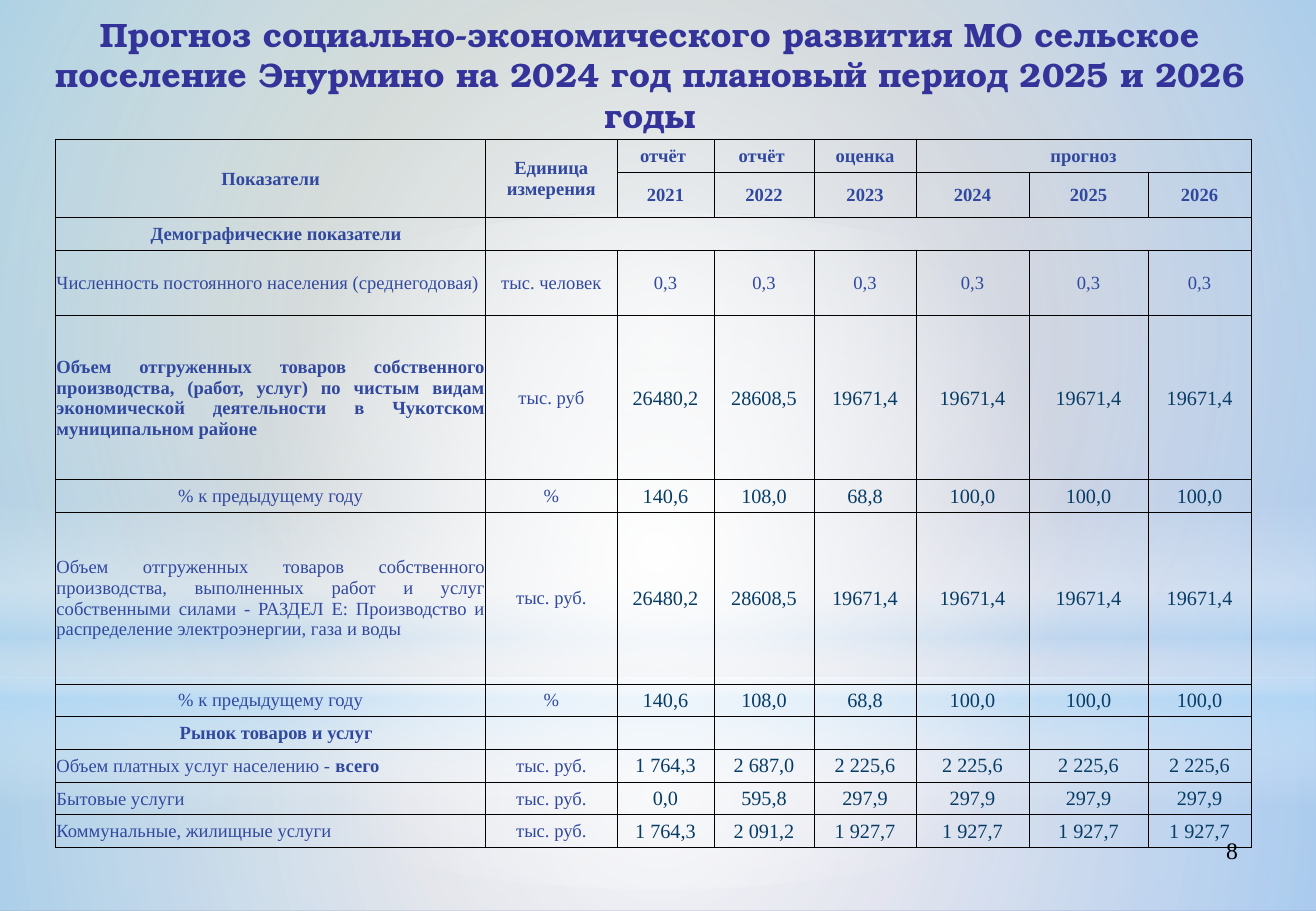
import pptx
import pptx.util
import pptx.dml.color
import pptx.enum.shapes
import pptx.enum.text
import pptx.oxml
import pptx.oxml.ns
from dataclasses import dataclass

Pt = pptx.util.Pt
RGB = pptx.dml.color.RGBColor.from_string
ALIGN = pptx.enum.text.PP_ALIGN
MIDDLE = pptx.enum.text.MSO_ANCHOR.MIDDLE
SHAPE = pptx.enum.shapes.MSO_SHAPE
qn = pptx.oxml.ns.qn
NS = pptx.oxml.ns.nsdecls("a")


@dataclass(frozen=True)
class Theme:
    wide: float = 780.13
    high: float = 540
    serif: str = "Times New Roman"
    head: str = "TeX Gyre Bonum"
    title: str = "333399"
    label: str = "31489F"
    value: str = "073C65"
    black: str = "000000"
    white: str = "FFFFFF"
    sky: str = "B4DCFA"
    dusk: tuple = ("96AB94", "8488C4")
    big: int = 20
    page: int = 14
    mid: int = 12
    small: int = 11
    line: float = 0.5


T = Theme()

TITLE = ("Прогноз социально-экономического развития МО сельское поселение "
         "Энурмино на 2024 год плановый период 2025 и 2026 годы")
COLS = [255, 77.8, 57.5, 59.4, 60.4, 67, 70.6, 61.1]
ROWS = [19.4] * 3 + [38.9, 97.2, 19.4, 101.6] + [19.4] * 5
HORIZON = 401.76
YEARS = ["2021", "2022", "2023", "2024", "2025", "2026"]

GOODS = ("Объем отгруженных товаров собственного производства, (работ, услуг) "
         "по чистым видам экономической деятельности в Чукотском муниципальном районе")
POWER = ("Объем отгруженных товаров собственного производства, выполненных работ "
         "и услуг собственными силами - РАЗДЕЛ E: Производство и распределение "
         "электроэнергии, газа и воды")
OUTPUT = ["26480,2", "28608,5", "19671,4"]
GROWTH = ["140,6", "108,0", "68,8"] + ["100,0"] * 3
SHARE = ([("% к предыдущему году", False)], ALIGN.CENTER, "%", GROWTH)

# Table row: label runs (text, bold), label alignment, unit, values;
# a list of three values carries the last one through the forecast years.
DATA = {
    3: ([("Численность постоянного населения (среднегодовая)", False)],
        ALIGN.LEFT, "тыс. человек", ["0,3"] * 3),
    4: ([(GOODS, True)], ALIGN.JUSTIFY, "тыс. руб", OUTPUT),
    5: SHARE,
    6: ([(POWER, False)], ALIGN.JUSTIFY, "тыс. руб.", OUTPUT),
    7: SHARE,
    9: ([("Объем платных услуг населению - ", False), ("всего", True)],
        ALIGN.LEFT, "тыс. руб.", ["1 764,3", "2 687,0", "2 225,6"]),
    10: ([("Бытовые услуги", False)],
         ALIGN.LEFT, "тыс. руб.", ["0,0", "595,8", "297,9"]),
    11: ([("Коммунальные, жилищные услуги", False)],
         ALIGN.LEFT, "тыс. руб.", ["1 764,3", "2 091,2", "1 927,7"]),
}
PEOPLE = 3
SECTIONS = {2: "Демографические показатели", 8: "Рынок товаров и услуг"}


def add_run(para, text, size, color, bold=False, face=T.serif):
    run = para.add_run()
    run.text = text
    font = run.font
    font.name, font.size, font.bold = face, Pt(size), bold
    font.color.rgb = RGB(color)


def add_text(slide, box, text, align, anchor, **style):
    frame = slide.shapes.add_textbox(*map(Pt, box)).text_frame
    frame.word_wrap = True
    frame.vertical_anchor = anchor
    para = frame.paragraphs[0]
    para.alignment = align
    add_run(para, text, **style)


def add_glow(slide, kind, box, stops, angle=None):
    """Add a borderless shape with (place, colour, opacity) gradient stops."""
    shape = slide.shapes.add_shape(kind, *map(Pt, box))
    shape.shadow.inherit = False
    shape.line.fill.background()
    shape.fill.background()
    marks = "".join(
        f'<a:gs pos="{place * 1000}"><a:srgbClr val="{color}">'
        f'<a:alpha val="{alpha * 1000}"/></a:srgbClr></a:gs>'
        for place, color, alpha in stops)
    if angle is None:
        way = ('<a:path path="circle"><a:fillToRect l="50000" t="50000" '
               'r="50000" b="50000"/></a:path>')
    else:
        way = f'<a:lin ang="{angle * 60000}" scaled="0"/>'
    grad = pptx.oxml.parse_xml(
        f'<a:gradFill {NS} rotWithShape="1"><a:gsLst>{marks}</a:gsLst>{way}</a:gradFill>')
    props = shape._element.spPr
    props.replace(props.find(qn("a:noFill")), grad)


def add_sky(slide):
    fill = slide.background.fill
    fill.gradient()
    fill.gradient_angle = 315
    for stop, color in zip(fill.gradient_stops, T.dusk):
        stop.color.rgb = RGB(color)
    white, sky = T.white, T.sky
    add_glow(slide, SHAPE.RECTANGLE, (0, HORIZON, T.wide, T.high - HORIZON),
             [(0, white, 91), (37, white, 76), (100, sky, 79)])
    add_glow(slide, SHAPE.RECTANGLE, (0, 0, T.wide, HORIZON),
             [(0, white, 89), (48, white, 62), (100, sky, 79)])
    add_glow(slide, SHAPE.RECTANGLE, (0, 296.6, T.wide, 180),
             [(0, white, 0), (29, white, 30), (45, sky, 40),
              (55, white, 26), (65, sky, 60), (100, white, 0)], 90)
    add_glow(slide, SHAPE.OVAL, (0, 126, T.wide, HORIZON),
             [(0, white, 100), (56, white, 0)])


def style_cell(cell):
    cell.vertical_anchor = MIDDLE
    cell.margin_left = cell.margin_right = cell.margin_top = Pt(0.5)
    cell.margin_bottom = 0
    props = cell._tc.get_or_add_tcPr()
    for side in ("lnL", "lnR", "lnT", "lnB"):
        props.append(pptx.oxml.parse_xml(
            f'<a:{side} {NS} w="{Pt(T.line)}"><a:solidFill>'
            f'<a:srgbClr val="{T.black}"/></a:solidFill></a:{side}>'))
    cell.fill.background()
    # Keeps the default type size from stretching rows with empty cells.
    cell.text_frame.paragraphs[0]._p.append(
        pptx.oxml.parse_xml(f'<a:endParaRPr {NS} sz="{T.small * 100}"/>'))


def fill_cell(cell, runs, align=ALIGN.CENTER, size=T.small, color=T.label):
    para = cell.text_frame.paragraphs[0]
    para.alignment = align
    for text, bold in runs:
        add_run(para, text, size, color, bold)


def add_grid(slide):
    frame = slide.shapes.add_table(len(ROWS), len(COLS), Pt(33), Pt(82.6),
                                   Pt(sum(COLS)), Pt(sum(ROWS)))
    grid = frame.table
    grid.first_row = grid.horz_banding = False
    for col, wide in zip(grid.columns, COLS):
        col.width = Pt(wide)
    for row, high in zip(grid.rows, ROWS):
        row.height = Pt(high)
    for cell in grid.iter_cells():
        style_cell(cell)
    for first, last in [((0, 0), (1, 0)), ((0, 1), (1, 1)),
                        ((0, 5), (0, 7)), ((2, 1), (2, 7))]:
        grid.cell(*first).merge(grid.cell(*last))

    heads = ["Показатели", "Единица измерения", "отчёт ", "отчёт ", "оценка", "прогноз"]
    for col, text in enumerate(heads):
        fill_cell(grid.cell(0, col), [(text, True)])
    for col, text in enumerate(YEARS, 2):
        fill_cell(grid.cell(1, col), [(text, True)])
    for row, text in SECTIONS.items():
        cell = grid.cell(row, 0)
        cell.margin_left = Pt(7)
        fill_cell(cell, [(text, True)])
    for row, (runs, align, unit, values) in DATA.items():
        fill_cell(grid.cell(row, 0), runs, align)
        fill_cell(grid.cell(row, 1), [(unit, False)])
        size, color = (T.small, T.label) if row == PEOPLE else (T.mid, T.value)
        full = values + values[-1:] * (len(YEARS) - len(values))
        for col, text in enumerate(full, 2):
            fill_cell(grid.cell(row, col), [(text, False)], size=size, color=color)


def main():
    deck = pptx.Presentation()
    deck.slide_width, deck.slide_height = Pt(T.wide), Pt(T.high)
    slide = deck.slides.add_slide(deck.slide_layouts[6])
    add_sky(slide)
    add_text(slide, (558.7, 491.8, 182.2, 37.4), "8", ALIGN.RIGHT,
             pptx.enum.text.MSO_ANCHOR.TOP, size=T.page, color=T.black)
    add_text(slide, (22.3, 16.4, 725.8, 55.4), TITLE, ALIGN.CENTER, MIDDLE,
             size=T.big, color=T.title, bold=True, face=T.head)
    add_grid(slide)
    deck.save("out.pptx")


if __name__ == "__main__":
    main()
